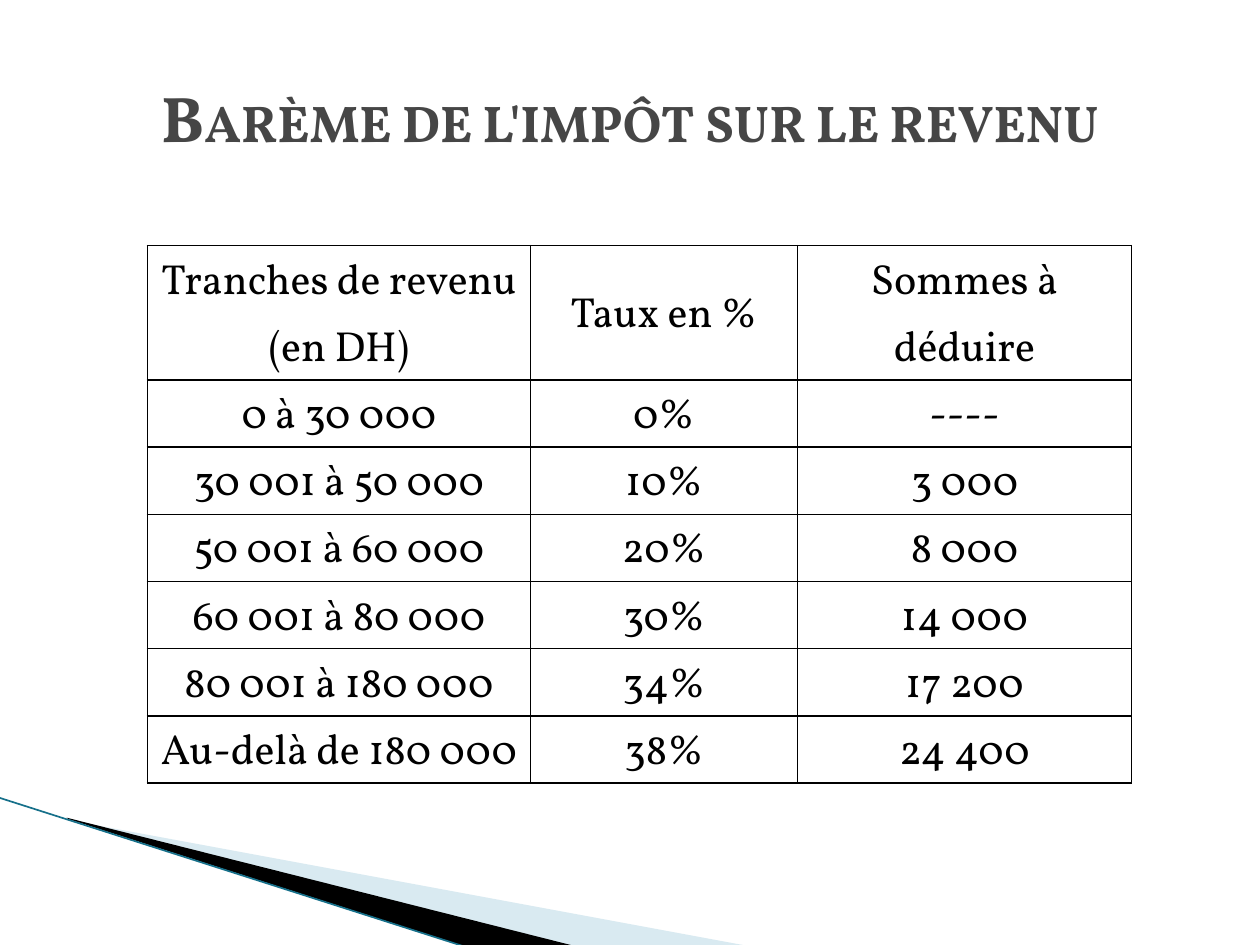
"""Build the slide showing the income tax scale."""
from dataclasses import dataclass

from lxml.etree import SubElement
from pptx import Presentation
from pptx.dml.color import RGBColor
from pptx.enum.shapes import MSO_CONNECTOR
from pptx.enum.text import MSO_ANCHOR, PP_ALIGN
from pptx.oxml.ns import qn
from pptx.util import Inches, Pt


@dataclass(frozen=True)
class Theme:
    font: str = "Vollkorn"
    title: str = "464646"
    text: str = "000000"
    pale: str = "A0CBDC"
    edge: str = "16708A"
    alpha: int = 40
    title_size: float = 36.9
    text_size: float = 24
    spacing: float = 1.15


def style(para, size, color, bold=False):
    para.alignment = PP_ALIGN.CENTER
    for run in para.runs:
        run.font.name = theme.font
        run.font.size = Pt(size)
        run.font.bold = bold
        run.font.color.rgb = RGBColor.from_string(color)


theme = Theme()
deck = Presentation()
deck.slide_width, deck.slide_height = Inches(10), Inches(7.5)
slide = deck.slides.add_slide(deck.slide_layouts[5])
shapes = slide.shapes

wedges = [
    (theme.pale, theme.alpha, (0.78, 5.47, 4.16, 1.58),
     [(0.55, 6.51), (5.95, 7.51), (4.56, 7.51), (0.55, 6.5)]),
    (theme.text, 100, (-0.06, 6.33, 4.16, 0.92),
     [(0.53, 6.49), (4.57, 7.51), (3.72, 7.52), (0.54, 6.5)]),
]
for color, alpha, box, points in wedges:
    left, top, width, height = map(Inches, box)
    spots = [(Inches(x), Inches(y)) for x, y in points]
    maker = shapes.build_freeform(*spots[0])
    maker.add_line_segments(spots[1:], close=True)
    wedge = maker.convert_to_shape()
    outline = wedge._element.find(".//" + qn("a:path"))
    outline.set("w", str(width))
    outline.set("h", str(height))
    for point, (x, y) in zip(outline.iter(qn("a:pt")), spots):
        point.set("x", str(x - left))
        point.set("y", str(y - top))
    wedge.left, wedge.top, wedge.width, wedge.height = left, top, width, height
    wedge.shadow.inherit = False
    wedge.line.fill.background()
    wedge.fill.solid()
    wedge.fill.fore_color.rgb = RGBColor.from_string(color)
    if alpha < 100:
        tint = wedge.fill._xPr.find(".//" + qn("a:srgbClr"))
        SubElement(tint, qn("a:alpha"), val=str(alpha * 1000))

edge = shapes.add_connector(
    MSO_CONNECTOR.STRAIGHT, Inches(-0.01), Inches(6.33), Inches(3.71), Inches(7.52))
edge.line.width = Pt(0.95)
edge.line.color.rgb = RGBColor.from_string(theme.edge)
SubElement(edge._element.spPr, qn("a:effectLst"))

title = shapes.title
title.left, title.top = Inches(0.5), Inches(0.3)
title.width, title.height = Inches(9), Inches(1.25)
frame = title.text_frame
frame.text = "Barème de l'impôt sur le revenu"
frame.vertical_anchor = MSO_ANCHOR.MIDDLE
style(frame.paragraphs[0], theme.title_size, theme.title, bold=True)
frame.paragraphs[0].runs[0].font._element.set("cap", "small")

rows = [
    ("Tranches de revenu (en DH)", "Taux en %", "Sommes à déduire"),
    ("0 à 30 000", "0%", "----"),
    ("30 001 à 50 000", "10%", "3 000"),
    ("50 001 à 60 000", "20%", "8 000"),
    ("60 001 à 80 000", "30%", "14 000"),
    ("80 001 à 180 000", "34%", "17 200"),
    ("Au-delà de 180 000", "38%", "24 400"),
]
widths = [3.04, 2.12, 2.65]
holder = shapes.add_table(
    len(rows), len(widths), Inches(1.17), Inches(1.95),
    Inches(sum(widths)), Inches(4.13))
table = holder.table
table.first_row = table.horz_banding = False
for column, width in zip(table.columns, widths):
    column.width = Inches(width)
for row, texts in zip(table.rows, rows):
    row.height = Inches(0.53)
    for cell, text in zip(row.cells, texts):
        cell.text_frame.text = text
        cell.vertical_anchor = MSO_ANCHOR.MIDDLE
        cell.margin_left = cell.margin_right = 0
        cell.margin_top = cell.margin_bottom = 0
        para = cell.text_frame.paragraphs[0]
        para.line_spacing = theme.spacing
        style(para, theme.text_size, theme.text)
        props = cell._tc.get_or_add_tcPr()
        for side in ("lnL", "lnR", "lnT", "lnB"):
            line = SubElement(props, qn("a:" + side), w=str(Pt(1)))
            fill = SubElement(line, qn("a:solidFill"))
            SubElement(fill, qn("a:srgbClr"), val=theme.text)
        cell.fill.background()
holder.height = Inches(4.13)

deck.save("out.pptx")
